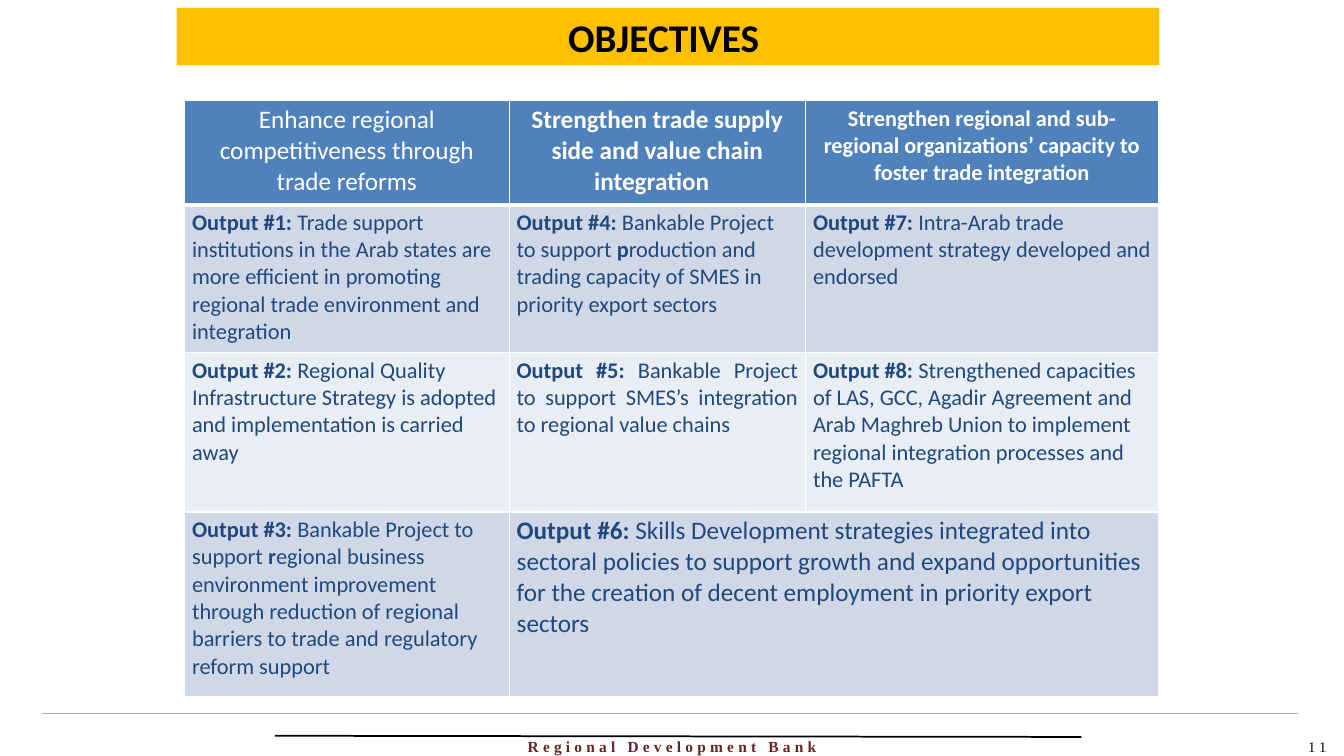
from dataclasses import dataclass

from lxml.etree import SubElement
from pptx import Presentation
from pptx.dml.color import RGBColor
from pptx.enum.shapes import MSO_CONNECTOR, MSO_SHAPE
from pptx.enum.text import MSO_ANCHOR, PP_ALIGN
from pptx.oxml.ns import qn
from pptx.util import Cm, Pt

WHITE = RGBColor(0xFF, 0xFF, 0xFF)
BLACK = RGBColor(0x00, 0x00, 0x00)
AMBER = RGBColor(0xFF, 0xC0, 0x00)
HEADER_BLUE = RGBColor(0x4F, 0x81, 0xBD)
BAND_DARK = RGBColor(0xD0, 0xD8, 0xE8)
BAND_LIGHT = RGBColor(0xE9, 0xED, 0xF4)
NAVY = RGBColor(0x1F, 0x49, 0x7D)
MAROON = RGBColor(0x63, 0x25, 0x23)
INK = RGBColor(0x07, 0x0D, 0x13)
TAUPE = RGBColor(0xBB, 0xAD, 0xA7)

SANS = "Calibri"
SERIF = "Times New Roman"


@dataclass
class TextStyle:
    size: float
    color: RGBColor
    font: str = SANS
    spacing: int = 0


@dataclass
class Entry:
    """Cell text; parts between ** marks are bold."""
    text: str
    size: float = 16
    align: PP_ALIGN = PP_ALIGN.LEFT


@dataclass
class Rule:
    x1: float
    y1: float
    x2: float
    y2: float
    color: RGBColor
    weight: float


@dataclass
class FooterText:
    x: float
    y: float
    w: float
    h: float
    text: str
    style: TextStyle
    align: PP_ALIGN


COLUMN_WIDTHS = [8.18, 7.47, 8.89]
ROW_HEIGHTS = [2.62, 3.73, 4.01, 4.65]
ROW_FILLS = [HEADER_BLUE, BAND_DARK, BAND_LIGHT, BAND_DARK]

ROWS = [
    [
        Entry("Enhance regional competitiveness through trade reforms", 18, PP_ALIGN.CENTER),
        Entry("**Strengthen trade supply side and value chain integration  **", 18, PP_ALIGN.CENTER),
        Entry("**Strengthen regional and sub-regional organizations’ capacity to foster "
              "trade integration**", 16, PP_ALIGN.CENTER),
    ],
    [
        Entry("**Output #1: **Trade support institutions in the Arab states are more "
              "efficient in promoting regional trade environment and integration"),
        Entry("**Output #4: **Bankable Project to support **p**roduction and trading "
              "capacity of SMES in priority export sectors"),
        Entry("**Output #7: **Intra-Arab trade development strategy developed and endorsed"),
    ],
    [
        Entry("**Output #2: **Regional Quality Infrastructure Strategy is adopted and "
              "implementation is carried away"),
        Entry("**Output #5: **Bankable Project to support SMES’s integration to regional "
              "value chains", align=PP_ALIGN.JUSTIFY),
        Entry("**Output #8: **Strengthened capacities of LAS, GCC, Agadir Agreement and "
              "Arab Maghreb Union to implement regional integration processes and the PAFTA"),
    ],
    [
        Entry("**Output #3: **Bankable Project to support **r**egional business environment "
              "improvement through reduction of regional barriers to trade and regulatory "
              "reform support"),
        Entry("**Output #6: **Skills Development strategies integrated into sectoral "
              "policies to support growth and expand opportunities for the creation of "
              "decent employment in priority export sectors", 18),
    ],
]

RULES = [
    Rule(1.07, 17.98, 32.72, 17.98, TAUPE, 0.75),
    Rule(6.93, 18.54, 27.25, 18.57, BLACK, 1.25),
]

FOOTER = [
    FooterText(12.24, 18.44, 9.4, 0.61, "**Regional Development Bank**",
               TextStyle(11, MAROON, SERIF, 300), PP_ALIGN.CENTER),
    FooterText(32.72, 18.47, 1.14, 0.58, "11",
               TextStyle(10.5, INK, SERIF, 300), PP_ALIGN.LEFT),
]


def write(tf, text: str, style: TextStyle, align: PP_ALIGN) -> None:
    """Fill the first paragraph, switching bold at each ** mark."""
    p = tf.paragraphs[0]
    p.alignment = align
    for i, part in enumerate(text.split("**")):
        if not part:
            continue
        r = p.add_run()
        r.text = part
        r.font.name = style.font
        r.font.size = Pt(style.size)
        r.font.bold = i % 2 == 1
        r.font.color.rgb = style.color
        if style.spacing:
            r.font._element.set("spc", str(style.spacing))


def add_borders(cell, bottom: float) -> None:
    tc_pr = cell._tc.get_or_add_tcPr()
    for side, weight in (("L", 1), ("R", 1), ("T", 1), ("B", bottom)):
        ln = SubElement(tc_pr, qn(f"a:ln{side}"), w=str(Pt(weight)))
        fill = SubElement(ln, qn("a:solidFill"))
        SubElement(fill, qn("a:srgbClr"), val=str(WHITE))


def add_objectives_table(s) -> None:
    frame = s.shapes.add_table(len(ROW_HEIGHTS), len(COLUMN_WIDTHS), Cm(4.65), Cm(2.54),
                               Cm(sum(COLUMN_WIDTHS)), Cm(sum(ROW_HEIGHTS)))
    table = frame.table
    for column, width in zip(table.columns, COLUMN_WIDTHS):
        column.width = Cm(width)
    for i, (height, fill) in enumerate(zip(ROW_HEIGHTS, ROW_FILLS)):
        table.rows[i].height = Cm(height)
        for cell in table.rows[i].cells:
            cell.margin_left = cell.margin_right = Cm(0.19)
            cell.margin_top = cell.margin_bottom = Cm(0.1)
            add_borders(cell, bottom=3 if i == 0 else 1)
            cell.fill.solid()
            cell.fill.fore_color.rgb = fill
        color = WHITE if i == 0 else NAVY
        for j, entry in enumerate(ROWS[i]):
            write(table.cell(i, j).text_frame, entry.text,
                  TextStyle(entry.size, color), entry.align)
    table.cell(3, 1).merge(table.cell(3, 2))


def add_rule(s, rule: Rule) -> None:
    line = s.shapes.add_connector(MSO_CONNECTOR.STRAIGHT, Cm(rule.x1), Cm(rule.y1),
                                  Cm(rule.x2), Cm(rule.y2))
    line.line.color.rgb = rule.color
    line.line.width = Pt(rule.weight)
    SubElement(line._element.spPr, qn("a:effectLst"))


def add_footer_text(s, item: FooterText) -> None:
    sp = s.shapes.add_textbox(Cm(item.x), Cm(item.y), Cm(item.w), Cm(item.h))
    tf = sp.text_frame
    tf.word_wrap = True
    tf.margin_right = 0 if item.align == PP_ALIGN.LEFT else Cm(0.25)
    write(tf, item.text, item.style, item.align)


def add_title(s) -> None:
    sp = s.shapes.add_shape(MSO_SHAPE.RECTANGLE, Cm(4.45), Cm(0.2), Cm(24.77), Cm(1.45))
    sp.shadow.inherit = False
    sp.fill.solid()
    sp.fill.fore_color.rgb = AMBER
    sp.line.fill.background()
    sp.text_frame.vertical_anchor = MSO_ANCHOR.TOP
    write(sp.text_frame, "**OBJECTIVES **", TextStyle(28, BLACK), PP_ALIGN.CENTER)


def main() -> None:
    prs = Presentation()
    prs.slide_width, prs.slide_height = Cm(33.87), Cm(19.05)
    s = prs.slides.add_slide(prs.slide_layouts[6])
    for rule in RULES:
        add_rule(s, rule)
    for item in FOOTER:
        add_footer_text(s, item)
    add_objectives_table(s)
    add_title(s)
    prs.save("out.pptx")


if __name__ == "__main__":
    main()
